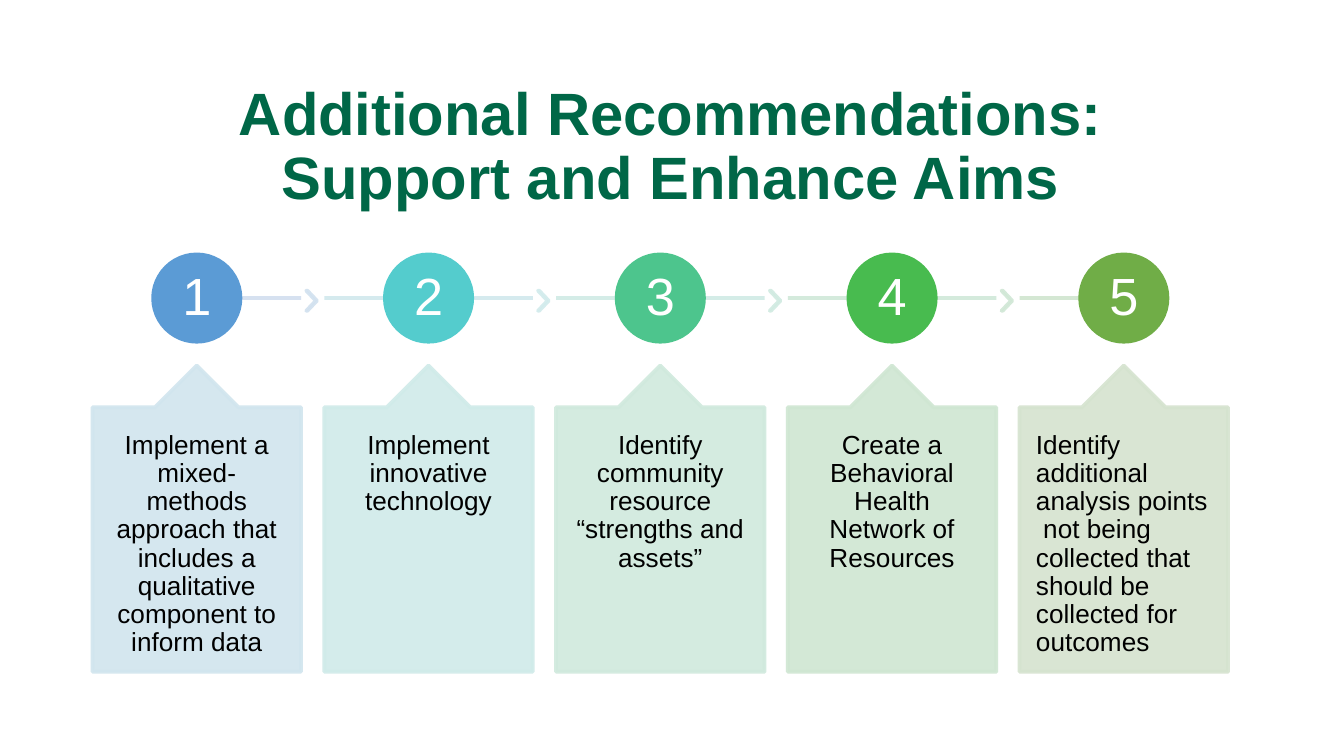
from lxml import etree
from pptx import Presentation
from pptx.dml.color import RGBColor
from pptx.enum.shapes import MSO_CONNECTOR, MSO_SHAPE
from pptx.enum.text import MSO_ANCHOR, PP_ALIGN
from pptx.oxml.ns import qn
from pptx.util import Cm, Pt

ELLIPSE, CHEVRON = MSO_SHAPE.OVAL, MSO_SHAPE.CHEVRON
CALLOUT = MSO_SHAPE.UP_ARROW_CALLOUT
STRAIGHT = MSO_CONNECTOR.STRAIGHT
TOP, MIDDLE = MSO_ANCHOR.TOP, MSO_ANCHOR.MIDDLE
LEFT, CENTER = PP_ALIGN.LEFT, PP_ALIGN.CENTER

GREEN = RGBColor(0x00, 0x67, 0x47)
WHITE = RGBColor(0xFF, 0xFF, 0xFF)
BLACK = RGBColor(0x00, 0x00, 0x00)

# Colours of each step: circle, line, chevron, callout
CIRCLES = [RGBColor.from_string(c) for c in
           ("5B9BD5", "54CCCD", "4DC58D", "48BB4F", "70AD47")]
LINES = [RGBColor.from_string(c) for c in
         ("D2DEEF", "D1E8ED", "D0EAE5", "D0E8D9", "D0E5CF")]
CHEVRONS = [RGBColor.from_string(c) for c in
            ("D1E1EF", "D1EBEC", "D0EAE1", "D0E7D5")]
CALLOUTS = [RGBColor.from_string(c) for c in
            ("D1E5EE", "D0EBE9", "D0E9DD", "CFE6D2", "D5E3CF")]

STEPS = [
    "Implement a mixed-methods approach that includes a qualitative "
    "component to inform data",
    "Implement innovative technology",
    "Identify community resource “strengths and assets”",
    "Create a Behavioral Health Network of Resources",
    "Identify additional analysis points  not being collected that "
    "should be collected for outcomes",
]

CARD_W, PITCH = 3.94, 4.38
CIRCLE_D = 1.65


def make_translucent(shape):
    """Give every fill and line colour of the shape 90 % opacity."""
    for clr in shape._element.spPr.iter(qn("a:srgbClr")):
        etree.SubElement(clr, qn("a:alpha")).set("val", "90000")


def add_filled(s, kind, x, y, w, h, color, adjustments=()):
    shape = s.shapes.add_shape(kind, Cm(x), Cm(y), Cm(w), Cm(h))
    shape.shadow.inherit = False
    for i, value in enumerate(adjustments):
        shape.adjustments[i] = value
    shape.fill.solid()
    shape.fill.fore_color.rgb = color
    shape.line.color.rgb = color
    shape.line.width = Pt(2)
    return shape


def add_line(s, x1, x2, y, color):
    line = s.shapes.add_connector(STRAIGHT, Cm(x1), Cm(y), Cm(x2), Cm(y))
    line.line.color.rgb = color
    line.line.width = Pt(2)
    etree.SubElement(line._element.spPr, qn("a:effectLst"))
    make_translucent(line)


def add_text(s, text, x, y, w, h, size, color, inset, anchor=TOP,
             align=CENTER, bold=False):
    tf = s.shapes.add_textbox(Cm(x), Cm(y), Cm(w), Cm(h)).text_frame
    tf.word_wrap = True
    tf.vertical_anchor = anchor
    tf.margin_left = tf.margin_right = Cm(inset[0])
    tf.margin_top = tf.margin_bottom = Cm(inset[1])
    p = tf.paragraphs[0]
    p.text = text
    p.alignment = align
    p.line_spacing = 0.9
    p.font.name = "Arial"
    p.font.size = Pt(size)
    p.font.bold = bold
    p.font.color.rgb = color


def add_title(s, x, y, w, h):
    add_text(s, "Additional Recommendations:\vSupport and Enhance Aims",
             x, y, w, h, 32, GREEN, (0.25, 0.13), MIDDLE, bold=True)


def add_step(s, i, x, y, w, h):
    """Place one numbered step: timeline piece above, callout below."""
    center = x + w / 2
    mid = y + CIRCLE_D / 2
    last = i == len(STEPS) - 1

    # Timeline line and chevron
    add_line(s, center + 0.2 if i == 0 else x, center if last else x + w,
             mid, LINES[i])
    if not last:
        make_translucent(add_filled(s, CHEVRON, x + w + 0.1, mid - 0.14,
                                    0.2, 0.38, CHEVRONS[i], [0.9]))

    # Numbered circle
    left = center - CIRCLE_D / 2
    add_filled(s, ELLIPSE, left, y, CIRCLE_D, CIRCLE_D, CIRCLES[i])
    add_text(s, str(i + 1), left + 0.24, y + 0.24, CIRCLE_D - 0.48,
             CIRCLE_D - 0.48, 28, WHITE, (0.08, 0.08), MIDDLE)

    # Callout and its text below the arrow
    top = y + 2.1
    arrow = 0.2 * w
    make_translucent(add_filled(s, CALLOUT, x, top, w, h - 2.1, CALLOUTS[i],
                                [0.5, 0.2, 0.2, 1]))
    add_text(s, STEPS[i], x, top + arrow, w, h - 2.1 - arrow, 14, BLACK,
             (0.31, 0.46), align=LEFT if last else CENTER)


def add_timeline(s, x, y, h):
    for i in range(len(STEPS)):
        add_step(s, i, x + i * PITCH, y, CARD_W, h)


def main():
    prs = Presentation()
    prs.slide_width, prs.slide_height = Cm(25.4), Cm(14.29)
    s = prs.slides.add_slide(prs.slide_layouts[6])
    add_title(s, 0.43, 1.42, 24.5, 2.77)
    add_timeline(s, 1.75, 4.81, 7.89)
    prs.save("out.pptx")


if __name__ == "__main__":
    main()
